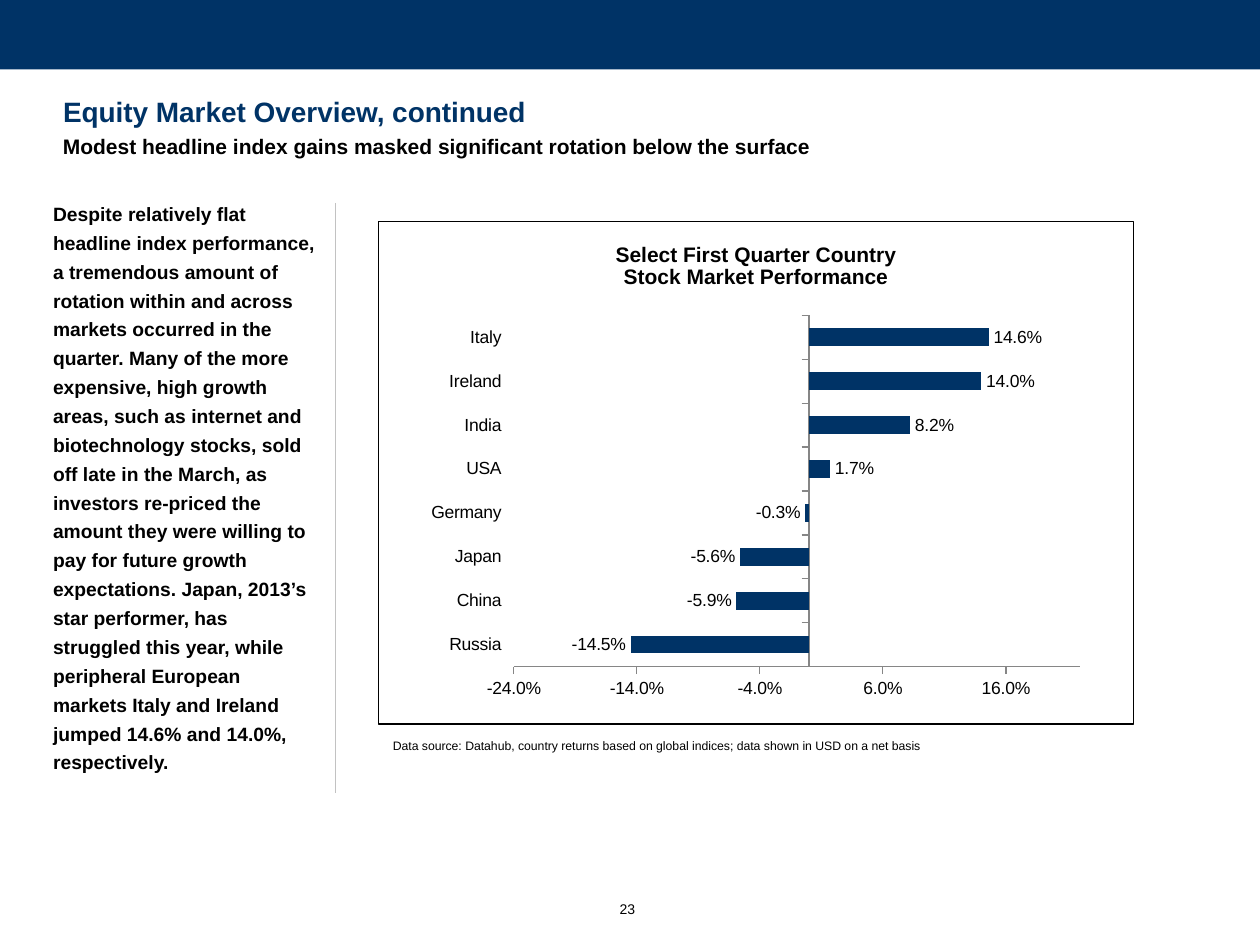
from lxml import etree
from pptx import Presentation
from pptx.chart.data import CategoryChartData
from pptx.dml.color import RGBColor
from pptx.enum.chart import (XL_CHART_TYPE, XL_LABEL_POSITION, XL_TICK_LABEL_POSITION,
                             XL_TICK_MARK)
from pptx.enum.shapes import MSO_CONNECTOR, MSO_SHAPE
from pptx.enum.text import MSO_ANCHOR, MSO_AUTO_SIZE, PP_ALIGN
from pptx.oxml import parse_xml
from pptx.oxml.ns import nsdecls, qn
from pptx.util import Cm, Pt

LEFT, JUSTIFY = PP_ALIGN.LEFT, PP_ALIGN.JUSTIFY
OUTSIDE_END = XL_LABEL_POSITION.OUTSIDE_END
LOW, OUTSIDE = XL_TICK_LABEL_POSITION.LOW, XL_TICK_MARK.OUTSIDE

# Content
NAVY, BLACK, WHITE, RULE, AXIS = "003366", "000000", "FFFFFF", "C2C2C2", "868686"
FONT = "Arial"
TITLE = "Equity Market Overview, continued"
SUBTITLE = "Modest headline index gains masked significant rotation below the surface"
COMMENTARY = (
    "Despite relatively flat headline index performance, a tremendous amount of rotation "
    "within and across markets occurred in the quarter. Many of the more expensive, high "
    "growth areas, such as internet and biotechnology stocks, sold off late in the March, "
    "as investors re-priced the amount they were willing to pay for future growth "
    "expectations. Japan, 2013’s star performer, has struggled this year, while peripheral "
    "European markets Italy and Ireland jumped 14.6% and 14.0%, respectively.")
SOURCE = ("Data source: Datahub, country returns based on global indices; "
          "data shown in USD on a net basis")
PAGE = "23"
CHART_TITLE = "Select First Quarter Country\nStock Market Performance"
RETURNS = [("Russia", -0.145), ("China", -0.059), ("Japan", -0.056), ("Germany", -0.003),
           ("USA", 0.017), ("India", 0.082), ("Ireland", 0.14), ("Italy", 0.146)]
PERCENT = "#,##0.0%"
PLOT = {"x": 0.179, "y": 0.187, "w": 0.75, "h": 0.699}


def rgb(color):
    return RGBColor.from_string(color)


def set_font(font, size, color=BLACK, bold=False):
    font.name, font.size, font.bold = FONT, Pt(size), bold
    font.color.rgb = rgb(color)


def write(sp, text, box, size, color=BLACK, bold=False, align=LEFT,
          insets=(0, 0, 0, 0), spacing=None):
    """Place a shape at box and fill it with one formatted paragraph."""
    sp.left, sp.top, sp.width, sp.height = (Cm(v) for v in box)
    tf = sp.text_frame
    tf.word_wrap, tf.auto_size = True, MSO_AUTO_SIZE.NONE
    tf.vertical_anchor = MSO_ANCHOR.TOP
    tf.margin_left, tf.margin_top, tf.margin_right, tf.margin_bottom = (
        Cm(v) for v in insets)
    p = tf.paragraphs[0]
    p.alignment = align
    if spacing:
        p.line_spacing = spacing
    r = p.add_run()
    r.text = text
    set_font(r.font, size, color, bold)


def add_text(text, box, size, **fmt):
    write(slide.shapes.add_textbox(0, 0, 0, 0), text, box, size, **fmt)


prs = Presentation()
prs.slide_width, prs.slide_height = Cm(25.4), Cm(19.05)
slide = prs.slides.add_slide(prs.slide_layouts[5])

# Top band and column rule
band = slide.shapes.add_shape(MSO_SHAPE.RECTANGLE, 0, 0, prs.slide_width, Cm(1.4))
band.shadow.inherit = False
band.fill.solid()
band.fill.fore_color.rgb = rgb(NAVY)
band.line.fill.background()

rule = slide.shapes.add_connector(MSO_CONNECTOR.STRAIGHT, Cm(6.76), Cm(4.09),
                                  Cm(6.76), Cm(15.98))
rule.line.color.rgb = rgb(RULE)
rule.line.width = Pt(0.75)
etree.SubElement(rule._element.spPr, qn("a:effectLst"))

# Texts
write(slide.shapes.title, TITLE, (1.27, 1.78, 22.86, 1.09), 16, color=NAVY, bold=True,
      insets=(0, 0.13, 0.25, 0.13))
add_text(SUBTITLE, (1.27, 2.69, 21.51, 1.12), 12, bold=True)
add_text(COMMENTARY, (1.07, 3.96, 5.38, 12.65), 11, bold=True, spacing=1.25)
add_text(SOURCE, (7.67, 14.63, 15.04, 1.5), 7, align=JUSTIFY,
         insets=(0.25, 0.25, 0.25, 0.25))
add_text(PAGE, (12.24, 18.03, 1.04, 1.02), 8, insets=(0.25, 0.13, 0.25, 0.13))

# Chart of country returns
data = CategoryChartData(number_format=PERCENT)
data.categories = [country for country, _ in RETURNS]
data.add_series("Series 1", [value for _, value in RETURNS])
chart = slide.shapes.add_chart(XL_CHART_TYPE.BAR_CLUSTERED, Cm(7.62), Cm(4.45),
                               Cm(15.24), Cm(10.16), data).chart
set_font(chart.font, 10)
chart.has_legend = False
chart.has_title = True
title_frame = chart.chart_title.text_frame
title_frame.text = CHART_TITLE
for p in title_frame.paragraphs:
    for r in p.runs:
        set_font(r.font, 12, bold=True)

plot = chart.plots[0]
plot.gap_width = 150
plot.vary_by_categories = False
series = plot.series[0]
series.invert_if_negative = False
series.format.fill.solid()
series.format.fill.fore_color.rgb = rgb(NAVY)
plot.has_data_labels = True
labels = plot.data_labels
labels.show_value = True
labels.number_format, labels.number_format_is_linked = PERCENT, False
labels.position = OUTSIDE_END
set_font(labels.font, 10)

# Axes
for axis in (chart.category_axis, chart.value_axis):
    axis.has_major_gridlines = False
    axis.major_tick_mark = OUTSIDE
    axis.format.line.color.rgb = rgb(AXIS)
    axis.format.line.width = Pt(0.75)
    set_font(axis.tick_labels.font, 10)
chart.category_axis.tick_label_position = LOW
values = chart.value_axis
values.minimum_scale, values.maximum_scale, values.major_unit = -0.24, 0.22, 0.1
values.tick_labels.number_format = PERCENT
values.tick_labels.number_format_is_linked = False

# Inner plot position and chart frame
plot_area = chart._chartSpace.chart.plotArea
for old in plot_area.findall(qn("c:layout")):
    plot_area.remove(old)
sizes = "".join(f'<c:{key} val="{value}"/>' for key, value in PLOT.items())
plot_area.insert(0, parse_xml(
    f'<c:layout {nsdecls("c")}><c:manualLayout><c:layoutTarget val="inner"/>'
    f'<c:xMode val="edge"/><c:yMode val="edge"/>{sizes}</c:manualLayout></c:layout>'))
chart._chartSpace.chart.addnext(parse_xml(
    f'<c:spPr {nsdecls("c", "a")}><a:solidFill><a:srgbClr val="{WHITE}"/></a:solidFill>'
    f'<a:ln w="{Pt(0.75)}"><a:solidFill><a:srgbClr val="{BLACK}"/></a:solidFill></a:ln>'
    '</c:spPr>'))

prs.save("out.pptx")
